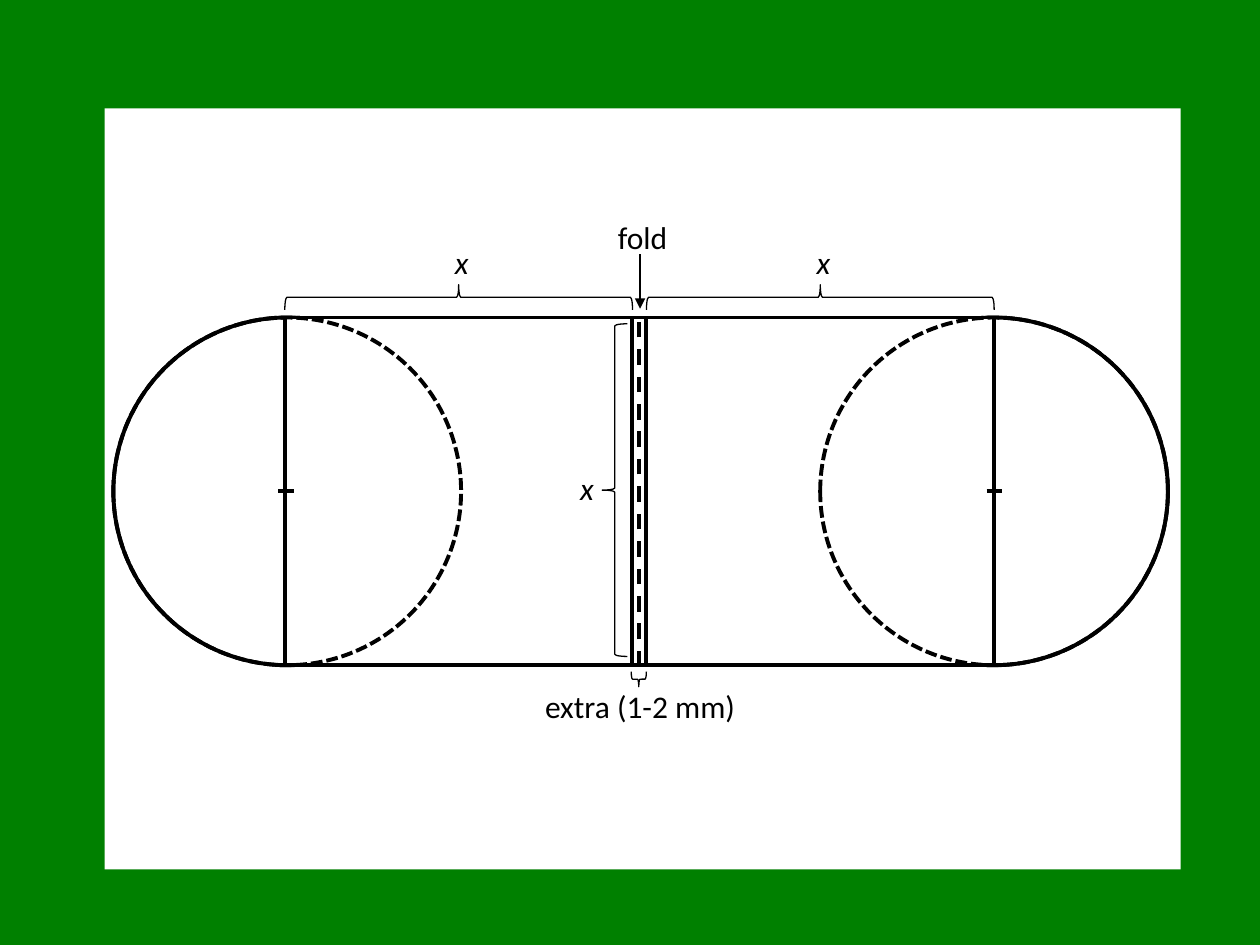
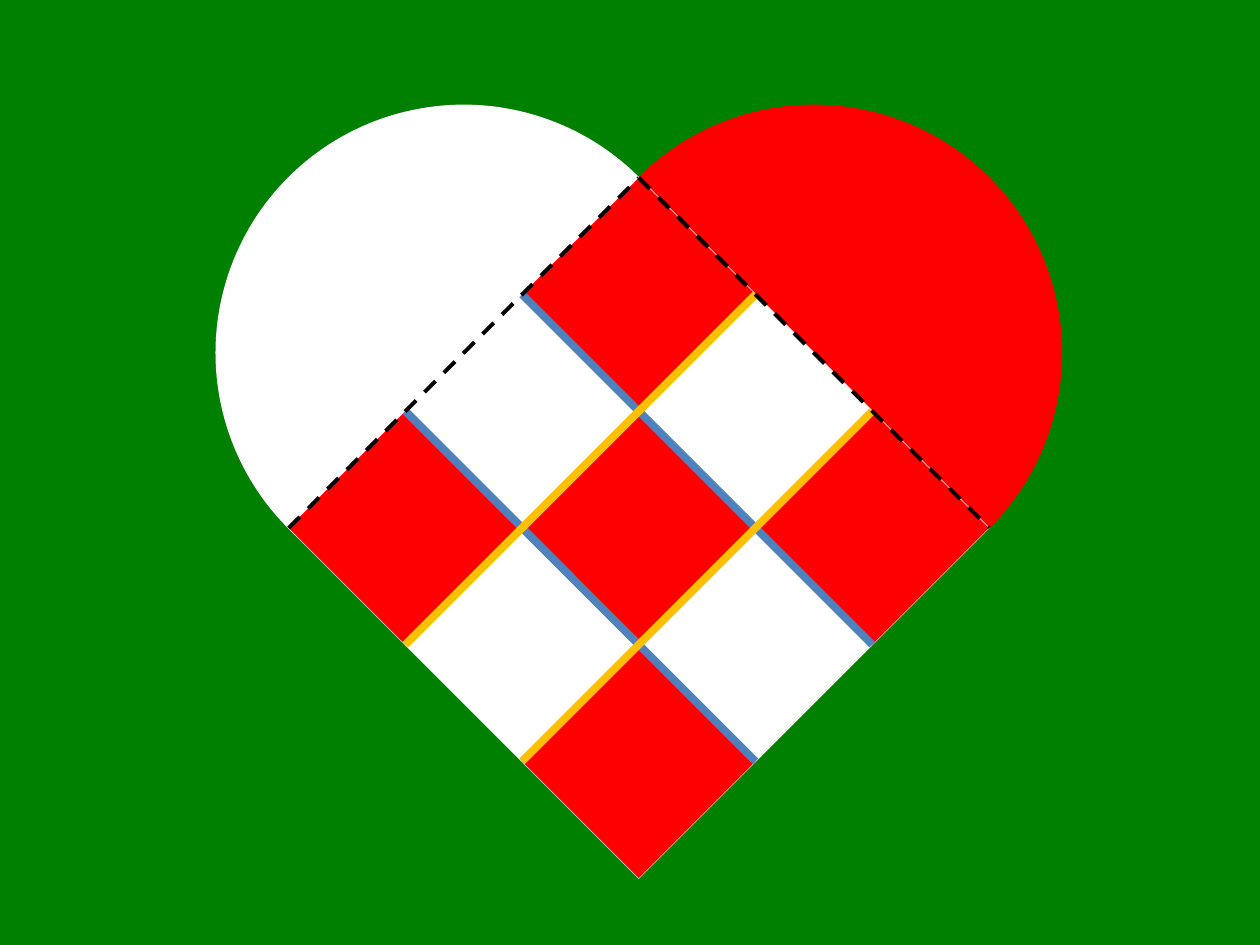
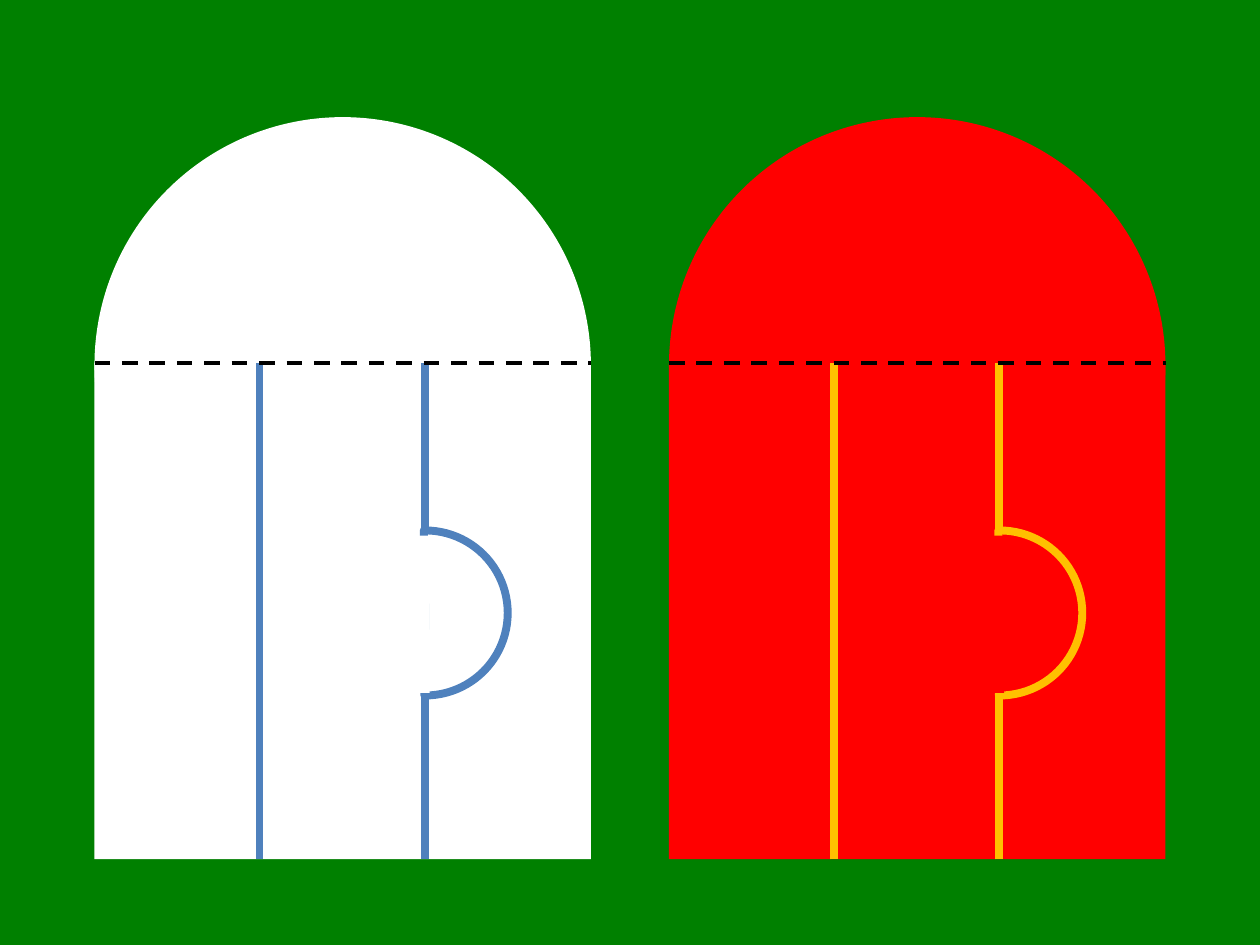
from math import sqrt
from lxml import etree
from pptx import Presentation
from pptx.dml.color import RGBColor
from pptx.enum import dml, shapes, text
from pptx.oxml.ns import qn
from pptx.util import Inches, Pt

GREEN, WHITE, RED, BLACK = "008000", "FFFFFF", "FF0000", "000000"
BLUE, GOLD = "4F81BD", "FFC000"
THIN, BOLD, CUT = 0.75, 2.25, 4.5
KIND, DASH = shapes.MSO_SHAPE, dml.MSO_LINE
SIDE = 3.94  # side of one paper square
CELL = 1.31  # a third of it


def paint(part, fill=None, line=None, width=BOLD, dash=None):
    """Set fill, outline and dash of a shape or connector, without shadow."""
    if hasattr(part, "fill"):
        part.shadow.inherit = False
        if fill:
            part.fill.solid()
            part.fill.fore_color.rgb = RGBColor.from_string(fill)
        else:
            part.fill.background()
    else:
        part.line.width = Pt(width)
        etree.SubElement(part._element.spPr, qn("a:effectLst"))
    if line:
        part.line.color.rgb = RGBColor.from_string(line)
        part.line.width = Pt(width)
        part.line.dash_style = dash
    else:
        part.line.fill.background()
    return part


def draw(tree, kind, box, turn=0, **look):
    """Add a painted shape at box, or a painted line when kind is None."""
    box = [Inches(n) for n in box]
    if kind is None:
        return paint(tree.add_connector(shapes.MSO_CONNECTOR.STRAIGHT, *box), **look)
    part = tree.add_shape(kind, *box)
    part.rotation = turn
    return paint(part, **look)


prs = Presentation()
prs.slide_width, prs.slide_height = Inches(10), Inches(7.5)
back = prs.slide_master.background.fill
back.solid()
back.fore_color.rgb = RGBColor.from_string(GREEN)
plan, heart, strips = [prs.slides.add_slide(prs.slide_layouts[6]).shapes for _ in range(3)]

# Slide 1: the folding plan
size, top = 2.76, 2.52
draw(plan, KIND.RECTANGLE, (0.83, 0.86, 8.54, 6.04), fill=WHITE)
draw(plan, KIND.RECTANGLE, (4.98, top, 0.16, size), fill=WHITE, line=BLACK)
for kind, lefts, look in (
    (KIND.OVAL, (6.51, 0.9), {"fill": WHITE}),
    (KIND.RECTANGLE, (2.26, 5.13), {"fill": WHITE}),
    (KIND.OVAL, (6.51, 0.9), {"dash": DASH.SQUARE_DOT}),
):
    for left in lefts:
        draw(plan, kind, (left, top, size, size), line=BLACK, **look)
for mid in (2.27, 7.89):
    draw(plan, None, (mid - 0.06, 3.9, mid + 0.06, 3.9), line=BLACK)
for box, turn in (
    ((3.54, 0.98, 0.2, size), 90),
    ((6.41, 0.98, 0.2, size), 90),
    ((5.01, 5.33, 0.12, 0.12), 270),
    ((4.78, 2.57, 0.2, 2.64), 0),
):
    draw(plan, KIND.LEFT_BRACE, box, turn, line=BLACK, width=THIN)
draw(plan, None, (5.07, 5.29, 5.07, 2.53), line=BLACK, dash=DASH.DASH)
arrow = draw(plan, None, (5.08, 2.02, 5.08, 2.45), line=BLACK, width=THIN)
etree.SubElement(arrow.line._get_or_add_ln(), qn("a:tailEnd"), type="triangle")
mid, right = text.PP_ALIGN.CENTER, text.PP_ALIGN.RIGHT
for word, left, y, width, align in (
    ("x", 3.43, 1.88, 0.47, mid),
    ("x", 6.3, 1.88, 0.47, mid),
    ("x", 4.42, 3.67, 0.39, right),
    ("fold", 4.21, 1.68, 1.78, mid),
    ("extra (1-2 mm)", 4.19, 5.4, 1.78, mid),
):
    frame = plan.add_textbox(Inches(left), Inches(y), Inches(width), Inches(0.4)).text_frame
    frame.word_wrap = True
    frame.auto_size = text.MSO_AUTO_SIZE.SHAPE_TO_FIT_TEXT
    frame.text = word
    para = frame.paragraphs[0]
    para.alignment = align
    font = para.runs[0].font
    font.name, font.size, font.italic = "Calibri", Pt(18), word == "x"
    font.color.rgb = RGBColor.from_string(BLACK)

# Slide 2: the woven heart, on a grid of half cell diagonals
cx, cy, step = 5.07, 4.19, CELL / sqrt(2)
tiles = [(KIND.OVAL, 1.5, -1.5, SIDE, RED), (KIND.OVAL, -1.5, -1.5, SIDE, WHITE),
         (KIND.RECTANGLE, 0, 0, SIDE, WHITE)]
tiles += [(KIND.RECTANGLE, col, row, CELL, RED)
          for col, row in ((0, -2), (0, 2), (2, 0), (-2, 0), (0, 0))]
for kind, col, row, side, fill in tiles:
    box = (cx + col * step - side / 2, cy + row * step - side / 2, side, side)
    draw(heart, kind, box, 315, fill=fill)
for ends, look in (
    ((1, 2, -2, -1), {"line": BLUE, "width": CUT}),
    ((2, 1, -1, -2), {"line": BLUE, "width": CUT}),
    ((1, -2, -2, 1), {"line": GOLD, "width": CUT}),
    ((2, -1, -1, 2), {"line": GOLD, "width": CUT}),
    ((0, -3, 3, 0), {"line": BLACK, "dash": DASH.DASH}),
    ((-3, 0, 0, -3), {"line": BLACK, "dash": DASH.DASH}),
):
    x1, y1, x2, y2 = ends
    draw(heart, None, (cx + x1 * step, cy + y1 * step, cx + x2 * step, cy + y2 * step), **look)

# Slide 3: the two halves with their cuts
fold, end = 2.88, 6.82
for left, fill, cut in ((0.75, WHITE, BLUE), (5.31, RED, GOLD)):
    half = strips.add_group_shape().shapes
    draw(half, KIND.OVAL, (left, 0.93, SIDE, SIDE), fill=fill)
    draw(half, KIND.RECTANGLE, (left, fold, SIDE, SIDE), fill=fill)
    one, two = left + CELL, left + 2 * CELL
    for x, y1, y2 in ((one, end, fold), (two, fold + CELL, fold), (two, end, end - CELL)):
        draw(half, None, (x, y1, x, y2), line=cut, width=CUT)
    bump = draw(half, KIND.PIE, (left + 1.97, 4.21, CELL, CELL), fill=fill, line=cut, width=CUT)
    bump.adjustments[0], bump.adjustments[1] = 161.39, 54.35
    draw(half, KIND.RECTANGLE, (left + 2.52, 4.25, 0.14, 1.25), fill=fill)
    draw(half, None, (left, fold, left + SIDE, fold), line=BLACK, dash=DASH.DASH)

prs.save("out.pptx")
